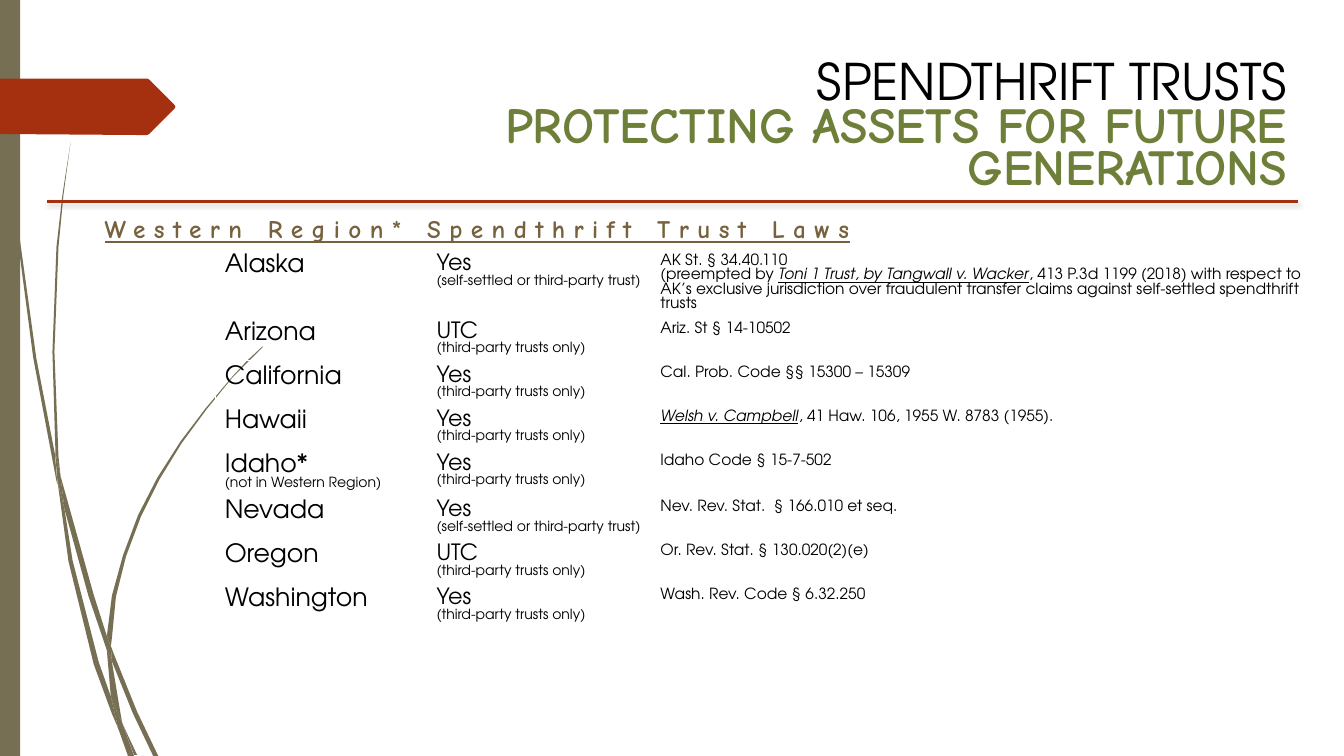
from dataclasses import dataclass

import pptx
import pptx.dml.color
import pptx.enum.shapes
import pptx.enum.text
import pptx.oxml
import pptx.oxml.ns
import pptx.util

EMU_PER_PX = 9144


@dataclass(frozen=True)
class Theme:
    olive: str = "766F54"
    rust: str = "A53010"
    black: str = "000000"
    green: str = "6D7F39"
    brown: str = "77623D"
    body_font: str = "TeX Gyre Adventor"
    display_font: str = "Comic Neue"
    title_size: int = 36
    heading_size: int = 18
    state_size: int = 18
    answer_size: int = 16
    statute_size: int = 11
    note_size: int = 10


@dataclass(frozen=True)
class Span:
    text: str
    case_name: bool = False


@dataclass(frozen=True)
class Line:
    spans: tuple[Span, ...]
    size: int


@dataclass(frozen=True)
class State:
    name: str
    answer: str
    scope: str
    statute: tuple[tuple[Span, ...], ...]
    note: str = ""


@dataclass(frozen=True)
class Outline:
    color: str
    points: tuple[tuple[int, int], ...]


THEME = Theme()
THIRD_PARTY = "(third-party trusts only)"
SELF_SETTLED = "(self-settled or third-party trust)"

STATES = (
    State("Alaska", "Yes", SELF_SETTLED, (
        (Span("AK St. § 34.40.110"),),
        (Span("(preempted by "), Span("Toni 1 Trust, by Tangwall v. Wacker", True),
         Span(", 413 P.3d 1199 (2018) with respect to AK’s exclusive jurisdiction over "
              "fraudulent transfer claims against self-settled spendthrift trusts")),
    )),
    State("Arizona", "UTC", THIRD_PARTY, ((Span("Ariz. St § 14-10502"),),)),
    State("California", "Yes", THIRD_PARTY, ((Span("Cal. Prob. Code §§ 15300 – 15309"),),)),
    State("Hawaii", "Yes", THIRD_PARTY, (
        (Span("Welsh v. Campbell", True), Span(", 41 Haw. 106, 1955 W. 8783 (1955).")),
    )),
    State("Idaho*", "Yes", THIRD_PARTY, ((Span("Idaho Code § 15-7-502"),),),
          "(not in Western Region)"),
    State("Nevada", "Yes", SELF_SETTLED, ((Span("Nev. Rev. Stat.  § 166.010 et seq."),),)),
    State("Oregon", "UTC", THIRD_PARTY, ((Span("Or. Rev. Stat. § 130.020(2)(e)"),),)),
    State("Washington", "Yes", THIRD_PARTY, ((Span("Wash. Rev. Code § 6.32.250"),),)),
)

GRASS = tuple(Outline(THEME.olive, points) for points in (
    ((7, 110), (17, 233), (33, 355), (56, 477), (57, 481), (55, 457), (55, 453), (36, 355),
     (19, 232), (8, 109), (5, 48), (3, 0), (3, 48)),
    ((88, 592), (106, 645), (106, 633), (106, 631), (93, 590), (60, 472), (64, 505)),
    ((113, 649), (110, 641), (111, 656), (132, 708), (152, 750), (157, 750), (136, 706)),
    ((110, 691), (98, 657), (72, 556), (64, 505), (57, 477), (68, 557), (93, 659), (111, 708),
     (117, 722), (116, 717)),
    ((60, 472), (58, 453), (54, 349), (58, 245), (63, 193), (70, 141), (62, 193), (56, 245),
     (52, 349), (55, 449)),
    ((133, 749), (136, 749), (122, 719)),
    ((57, 477), (64, 505), (60, 472), (55, 449), (55, 453)),
    ((111, 633), (115, 592), (125, 552), (140, 512), (158, 476), (180, 440), (205, 406),
     (231, 374), (246, 359), (261, 344), (260, 344), (245, 358), (231, 373), (204, 405),
     (179, 438), (156, 474), (137, 511), (122, 551), (111, 591), (106, 631), (110, 641)),
    ((117, 722), (127, 750), (131, 750)),
    ((106, 645), (110, 691), (116, 706), (122, 719), (121, 716), (111, 656), (109, 651)),
    ((106, 645), (109, 651), (111, 656), (110, 641), (106, 631), (106, 633)),
    ((116, 706), (110, 691), (116, 717), (117, 722), (130, 750), (133, 750), (122, 719)),
))
TAG = Outline(THEME.rust, (
    (173, 108), (148, 133), (146, 134), (136, 134), (0, 133), (0, 78), (136, 78), (146, 78),
    (148, 79), (173, 104), (174, 106),
))


def px(length: int) -> pptx.util.Emu:
    return pptx.util.Emu(length * EMU_PER_PX)


def rgb(color: str) -> pptx.dml.color.RGBColor:
    return pptx.dml.color.RGBColor.from_string(color)


def paint(shape, color: str) -> None:
    shape.shadow.inherit = False
    shape.fill.solid()
    shape.fill.fore_color.rgb = rgb(color)
    shape.line.fill.background()


def style(font, name: str, size: int, color: str) -> None:
    font.name = name
    font.size = pptx.util.Pt(size)
    font.color.rgb = rgb(color)


def draw_outline(slide, outline: Outline) -> None:
    start, *others = outline.points
    builder = slide.shapes.build_freeform(*start, scale=EMU_PER_PX)
    builder.add_line_segments(others, close=True)
    paint(builder.convert_to_shape(), outline.color)


def add_text_frame(slide, left: int, top: int, width: int, height: int):
    box = slide.shapes.add_textbox(px(left), px(top), px(width), px(height))
    box.text_frame.word_wrap = True
    return box.text_frame


def fill_cell(cell, lines: list[Line]) -> None:
    cell.fill.background()
    cell.margin_left = cell.margin_right = px(9)
    cell.margin_top = cell.margin_bottom = px(5)
    for index, line in enumerate(lines):
        frame = cell.text_frame
        paragraph = frame.add_paragraph() if index else frame.paragraphs[0]
        style(paragraph.font, THEME.body_font, line.size, THEME.black)
        for span in line.spans:
            run = paragraph.add_run()
            run.text = span.text
            if span.case_name:
                run.font.italic = True
                run.font.underline = True


def add_laws(slide) -> None:
    widths = (210, 222, 654)
    row_height = 41
    table = slide.shapes.add_table(len(STATES), len(widths), px(214), px(247),
                                   px(sum(widths)), px(row_height * len(STATES))).table
    table.first_row = False
    table.horz_banding = False
    for column, width in zip(table.columns, widths):
        column.width = px(width)
    for index, state in enumerate(STATES):
        name = [Line((Span(state.name),), THEME.state_size)]
        if state.note:
            name.append(Line((Span(state.note),), THEME.note_size))
        answer = [Line((Span(state.answer),), THEME.answer_size),
                  Line((Span(state.scope),), THEME.note_size)]
        statute = [Line(spans, THEME.statute_size) for spans in state.statute]
        for column_index, lines in enumerate((name, answer, statute)):
            fill_cell(table.cell(index, column_index), lines)


def add_title(slide) -> None:
    frame = add_text_frame(slide, 344, 59, 942, 141)
    frame.vertical_anchor = pptx.enum.text.MSO_ANCHOR.MIDDLE
    paragraph = frame.paragraphs[0]
    paragraph.alignment = pptx.enum.text.PP_ALIGN.RIGHT
    paragraph.line_spacing = 0.7
    topic = paragraph.add_run()
    topic.text = "SPENDTHRIFT TRUSTS"
    style(topic.font, THEME.body_font, THEME.title_size, THEME.black)
    paragraph.add_line_break()
    promise = paragraph.add_run()
    promise.text = "PROTECTING ASSETS FOR FUTURE GENERATIONS"
    style(promise.font, THEME.display_font, THEME.title_size, THEME.green)
    promise.font.bold = True


def add_rule(slide) -> None:
    rule = slide.shapes.add_connector(pptx.enum.shapes.MSO_CONNECTOR.STRAIGHT,
                                      px(47), px(200), px(1287), px(200))
    rule.line.color.rgb = rgb(THEME.rust)
    rule.line.width = pptx.util.Pt(1.75)
    rule._element.spPr.append(pptx.oxml.parse_xml(
        f'<a:effectLst {pptx.oxml.ns.nsdecls("a")}>'
        '<a:outerShdw blurRad="38100" dist="25400" dir="5400000" rotWithShape="0">'
        f'<a:srgbClr val="{THEME.black}"><a:alpha val="25000"/></a:srgbClr>'
        '</a:outerShdw></a:effectLst>'))


def add_heading(slide) -> None:
    paragraph = add_text_frame(slide, 94, 207, 1183, 40).paragraphs[0]
    style(paragraph.font, THEME.display_font, THEME.heading_size, THEME.brown)
    paragraph.font.bold = True
    paragraph.font.underline = True
    run = paragraph.add_run()
    run.text = "Western Region* Spendthrift Trust Laws"
    run._r.get_or_add_rPr().set("spc", "600")


def main() -> None:
    presentation = pptx.Presentation()
    presentation.slide_width = px(1333)
    presentation.slide_height = px(750)
    slide = presentation.slides.add_slide(presentation.slide_layouts[6])
    for blade in GRASS:
        draw_outline(slide, blade)
    bar = slide.shapes.add_shape(pptx.enum.shapes.MSO_SHAPE.RECTANGLE,
                                 px(0), px(0), px(20), px(750))
    paint(bar, THEME.olive)
    draw_outline(slide, TAG)
    add_laws(slide)
    add_title(slide)
    add_rule(slide)
    add_heading(slide)
    presentation.save("out.pptx")


if __name__ == "__main__":
    main()
